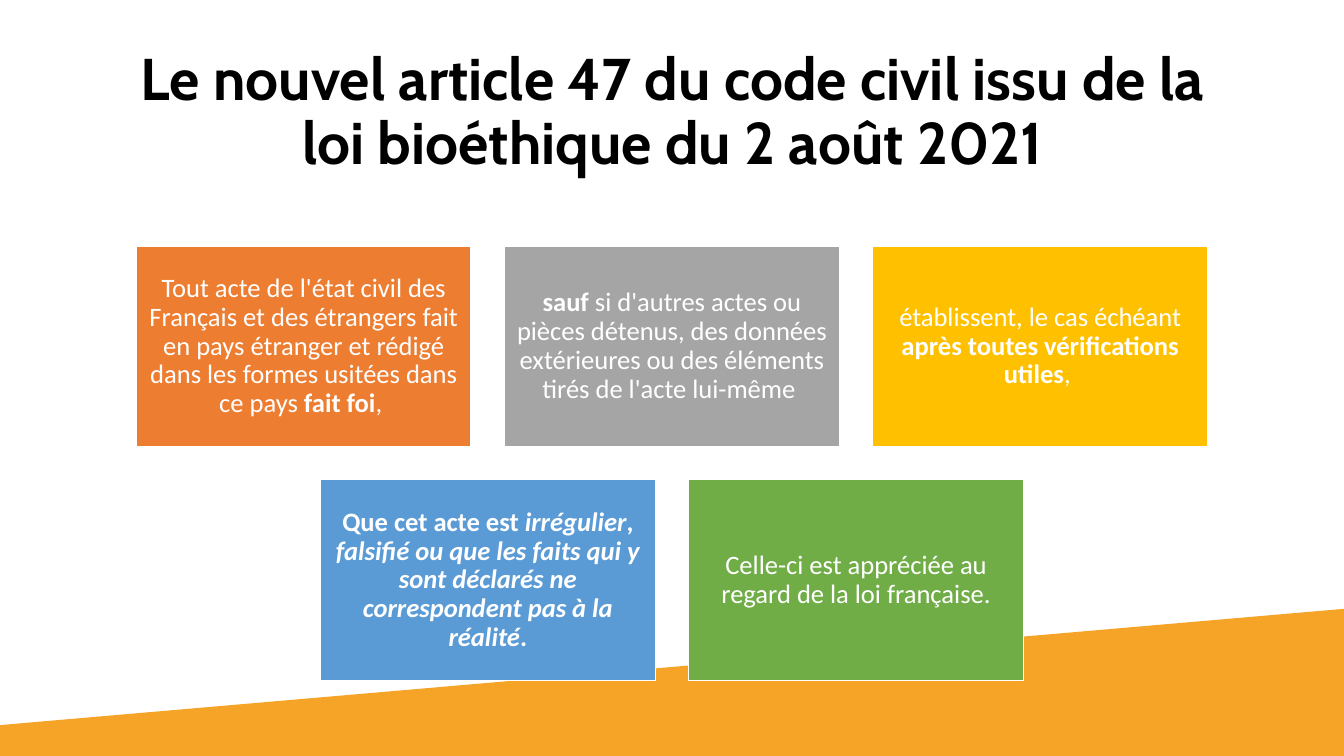
from pptx import Presentation
from pptx.dml.color import RGBColor
from pptx.enum.shapes import MSO_SHAPE
from pptx.enum.text import MSO_ANCHOR, MSO_AUTO_SIZE, PP_ALIGN
from pptx.util import Cm, Pt

WIDTH, HEIGHT = 33.87, 19.05
CARD_W, CARD_H, GAP = 8.44, 5.06, 0.84
TOP, PITCH = 6.2, 5.89

ROWS = [
    [
        ("ED7D31", [
            ("Tout acte de l'état civil des Français et des étrangers fait "
             "en pays étranger et rédigé dans les formes usitées dans ce pays ", ""),
            ("fait foi", "b"),
            (", ", ""),
        ]),
        ("A5A5A5", [
            ("sauf ", "b"),
            ("si d'autres actes ou pièces détenus, des données extérieures "
             "ou des éléments tirés de l'acte lui-même ", ""),
        ]),
        ("FFC000", [
            ("établissent, le cas échéant ", ""),
            ("après toutes vérifications utiles", "b"),
            (", ", ""),
        ]),
    ],
    [
        ("5B9BD5", [
            ("Que cet acte est ", "b"),
            ("irrégulier", "bi"),
            (", ", "b"),
            ("falsifié ou que les faits qui y sont déclarés "
             "ne correspondent pas à la réalité", "bi"),
            (".", "b"),
        ]),
        ("70AD47", [
            ("Celle-ci est appréciée au regard de la loi française.", ""),
        ]),
    ],
]


def color(code):
    return RGBColor.from_string(code)


class Deck:
    head_font, body_font = "Cabin", "Calibri"
    ink, paper, accent = "000000", "FFFFFF", "F5A427"

    def __init__(self):
        self.file = Presentation()
        self.file.slide_width = Cm(WIDTH)
        self.file.slide_height = Cm(HEIGHT)
        self.slide = self.file.slides.add_slide(self.file.slide_layouts[5])

    def shape(self, kind, left, top, width, height, fill, line):
        shape = self.slide.shapes.add_shape(
            kind, Cm(left), Cm(top), Cm(width), Cm(height))
        shape.shadow.inherit = False
        shape.fill.solid()
        shape.fill.fore_color.rgb = color(fill)
        shape.line.color.rgb = color(line)
        shape.line.width = Pt(1)
        return shape

    def style(self, para, name, size, ink):
        para.alignment = PP_ALIGN.CENTER
        para.line_spacing = 0.9
        para.font.name = name
        para.font.size = Pt(size)
        para.font.color.rgb = color(ink)

    def title(self, text):
        title = self.slide.shapes.title
        title.left, title.top = Cm(2.34), Cm(1.02)
        title.width, title.height = Cm(29.21), Cm(3.68)
        frame = title.text_frame
        frame.text = text
        frame.word_wrap = True
        frame.auto_size = MSO_AUTO_SIZE.NONE
        frame.vertical_anchor = MSO_ANCHOR.MIDDLE
        para = frame.paragraphs[0]
        self.style(para, self.head_font, 42, self.ink)
        para.font.bold = True

    def footer(self):
        slope = self.shape(MSO_SHAPE.RIGHT_TRIANGLE, 0, 15.36, WIDTH, 2.93,
                           self.accent, self.accent)
        slope._element.spPr.xfrm.set("flipH", "1")
        self.shape(MSO_SHAPE.RECTANGLE, 0, 18.29, WIDTH, 0.76,
                   self.accent, self.accent)

    def card(self, left, top, fill, runs):
        card = self.shape(MSO_SHAPE.RECTANGLE, left, top, CARD_W, CARD_H,
                          fill, self.paper)
        frame = card.text_frame
        frame.word_wrap = True
        frame.vertical_anchor = MSO_ANCHOR.MIDDLE
        frame.margin_left = frame.margin_right = Cm(0.2)
        frame.margin_top = frame.margin_bottom = Cm(0.2)
        para = frame.paragraphs[0]
        self.style(para, self.body_font, 19, self.paper)
        for text, marks in runs:
            run = para.add_run()
            run.text = text
            run.font.bold = "b" in marks
            run.font.italic = "i" in marks

    def row(self, top, cards):
        step = CARD_W + GAP
        start = (WIDTH - len(cards) * step + GAP) / 2
        for spot, (fill, runs) in enumerate(cards):
            self.card(start + spot * step, top, fill, runs)


def main():
    deck = Deck()
    deck.footer()
    deck.title("Le nouvel article 47 du code civil issu de la "
               "loi bioéthique du 2 août 2021")
    for rank, cards in enumerate(ROWS):
        deck.row(TOP + rank * PITCH, cards)
    deck.file.save("out.pptx")


if __name__ == "__main__":
    main()
